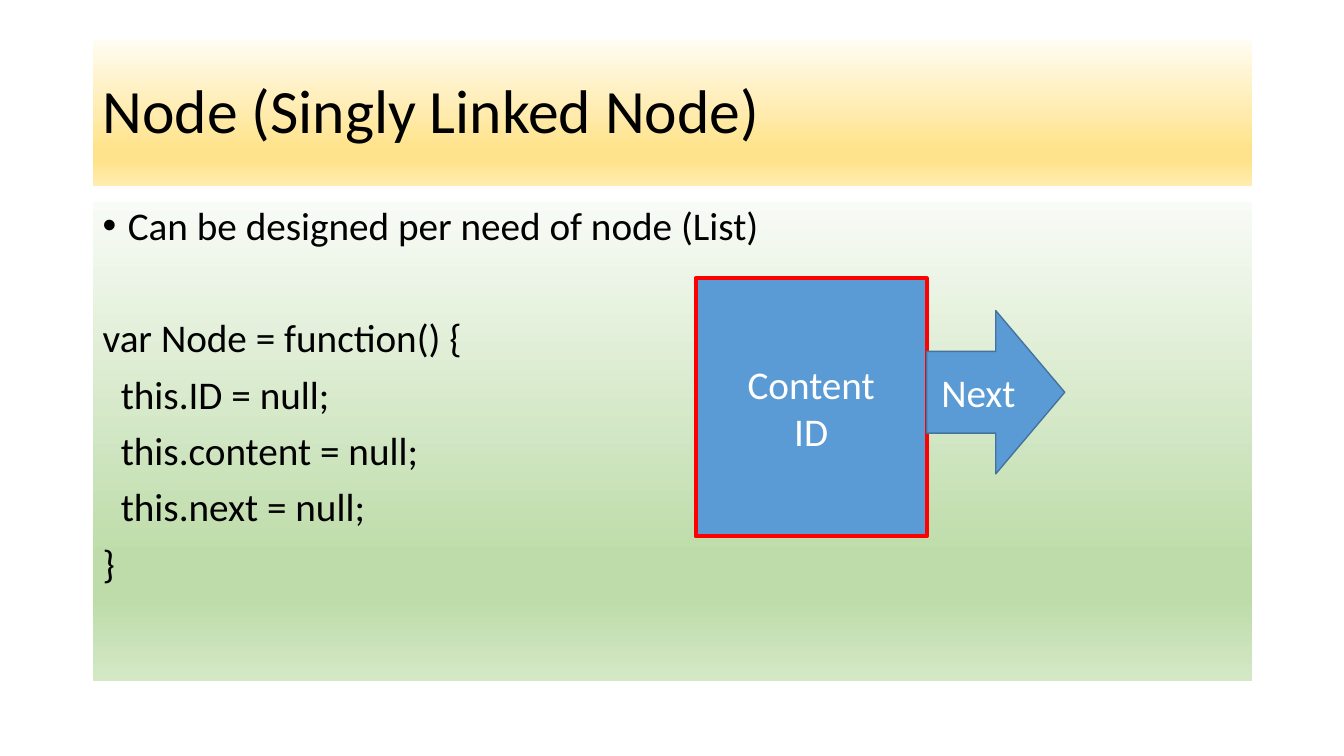
from lxml import etree
from pptx import Presentation
from pptx import util as u
from pptx.dml.color import RGBColor
from pptx.enum import shapes, text
from pptx.oxml import ns

WHITE = RGBColor(0xFF, 0xFF, 0xFF)
BLACK = RGBColor(0x00, 0x00, 0x00)
RED = RGBColor(0xFF, 0x00, 0x00)
BLUE = RGBColor(0x5B, 0x9B, 0xD5)
DARK_BLUE = RGBColor(0x43, 0x73, 0x9E)
YELLOWS = [RGBColor(0xFF, 0xFC, 0xF2), RGBColor(0xFF, 0xE3, 0x8C),
           RGBColor(0xFF, 0xE3, 0x8C), RGBColor(0xFF, 0xEC, 0xB2)]
GREENS = [RGBColor(0xF8, 0xFB, 0xF6), RGBColor(0xBE, 0xDC, 0xAA),
          RGBColor(0xBE, 0xDC, 0xAA), RGBColor(0xD4, 0xE8, 0xC6)]
STOPS = [0, 74, 83, 100]

WIDTH, HEIGHT = 13.33, 7.5
MARGIN, CONTENT_WIDTH = 0.92, 11.5
TITLE_BOX = (MARGIN, 0.4, CONTENT_WIDTH, 1.45)
BODY_BOX = (MARGIN, 2, CONTENT_WIDTH, 4.76)

BULLET = "Can be designed per need of node (List)"
CODE = [("var Node = function() {", 0), ("this.ID = null;", 1),
        ("this.content = null;", 1), ("this.next = null;", 1), ("}", 0)]
CODE_INDENT = 0.18


def add_box(page, kind, box, anchor):
    shape = page.shapes.add_shape(kind, *(u.Inches(length) for length in box))
    shape.shadow.inherit = False
    shape.text_frame.word_wrap = True
    shape.text_frame.vertical_anchor = anchor
    return shape


def fill_gradient(shape, colours):
    """Fill from top to bottom with the colours at STOPS."""
    shape.line.fill.background()
    shape.fill.gradient()
    shape.fill.gradient_angle = 270
    stop_list = shape._element.spPr.find(".//" + ns.qn("a:gsLst"))
    for stop in list(stop_list):
        stop_list.remove(stop)
    for position, colour in zip(STOPS, colours):
        stop = etree.SubElement(stop_list, ns.qn("a:gs"), pos=str(position * 1000))
        etree.SubElement(stop, ns.qn("a:srgbClr"), val=str(colour))


def write_lines(shape, lines, size, colour, **layout):
    """Write one paragraph per line and return the paragraphs."""
    frame = shape.text_frame
    for index, line in enumerate(lines):
        para = frame.add_paragraph() if index else frame.paragraphs[0]
        for name, value in layout.items():
            setattr(para, name, value)
        span = para.add_run()
        span.text = line
        for name, value in {"size": u.Pt(size), "name": "Calibri"}.items():
            setattr(span.font, name, value)
        span.font.color.rgb = colour
    return frame.paragraphs


def indent(para, left, first=0):
    properties = para._p.get_or_add_pPr()
    properties.set("marL", str(u.Inches(left)))
    properties.set("indent", str(u.Inches(first)))
    return properties


def add_title(page, box):
    shape = add_box(page, shapes.MSO_SHAPE.RECTANGLE, box, text.MSO_ANCHOR.MIDDLE)
    fill_gradient(shape, YELLOWS)
    write_lines(shape, ["Node (Singly Linked Node)"], 44, BLACK,
                alignment=text.PP_ALIGN.LEFT, line_spacing=0.9)


def add_body(page, box):
    shape = add_box(page, shapes.MSO_SHAPE.RECTANGLE, box, text.MSO_ANCHOR.TOP)
    fill_gradient(shape, GREENS)
    lines = [BULLET] + [line for line, level in CODE]
    bullet, *code = write_lines(shape, lines, 28, BLACK,
                                alignment=text.PP_ALIGN.LEFT,
                                line_spacing=0.9, space_before=u.Pt(10))
    properties = indent(bullet, 0.25, -0.25)
    etree.SubElement(properties, ns.qn("a:buFont"), typeface="Arial")
    etree.SubElement(properties, ns.qn("a:buChar"), char="•")
    for para, (line, level) in zip(code, CODE):
        indent(para, level * CODE_INDENT)
    code[0].space_before = u.Pt(50)


def add_node(page, box):
    """Draw a node in the left part of the box, its pointer in the rest."""
    left, top, width, height = box
    node_width = width * 0.626
    parts = [
        (shapes.MSO_SHAPE.RECTANGLE, (left, top, node_width, height),
         ["Content", "ID"], RED, 3),
        (shapes.MSO_SHAPE.RIGHT_ARROW,
         (left + node_width, top + height / 8, width - node_width, height * 0.633),
         ["Next"], DARK_BLUE, 1),
    ]
    for kind, part_box, lines, outline, weight in parts:
        shape = add_box(page, kind, part_box, text.MSO_ANCHOR.MIDDLE)
        shape.fill.solid()
        shape.fill.fore_color.rgb = BLUE
        shape.line.color.rgb = outline
        shape.line.width = u.Pt(weight)
        write_lines(shape, lines, 28, WHITE, alignment=text.PP_ALIGN.CENTER)


def main():
    deck = Presentation()
    deck.slide_width, deck.slide_height = u.Inches(WIDTH), u.Inches(HEIGHT)
    page = deck.slides.add_slide(deck.slide_layouts[6])
    add_title(page, TITLE_BOX)
    add_body(page, BODY_BOX)
    left, top, width, height = BODY_BOX
    add_node(page, (left + width * 0.52, top + height * 0.16, 3.66, 2.56))
    deck.save("out.pptx")


if __name__ == "__main__":
    main()
